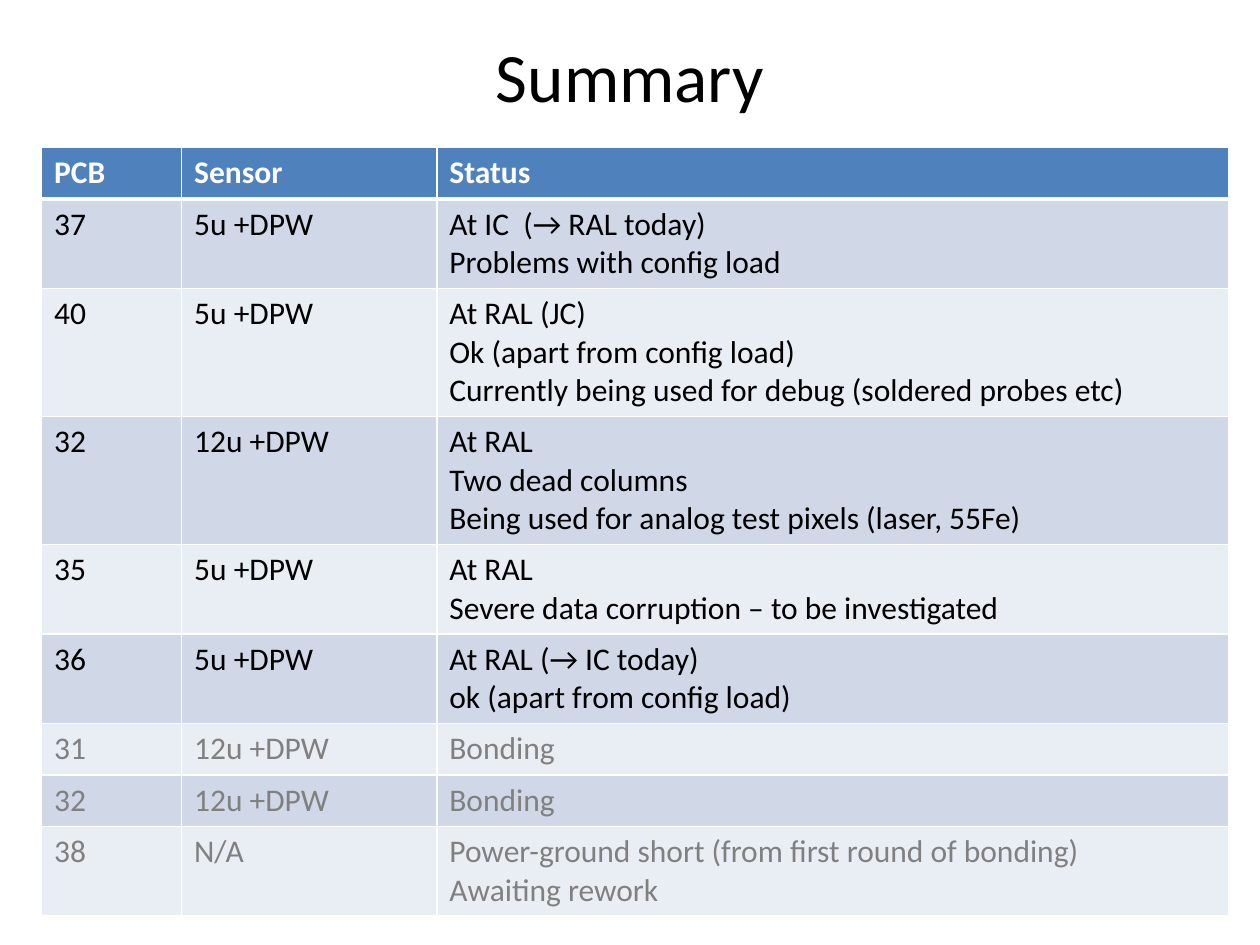
import dataclasses

import lxml.etree
import pptx
import pptx.dml.color
import pptx.enum.text
import pptx.oxml.ns
import pptx.util


@dataclasses.dataclass(frozen=True)
class Theme:
    font: str = "Calibri"
    title_size: float = 39.6
    body_size: float = 18
    ink: str = "000000"
    muted: str = "808080"
    paper: str = "FFFFFF"
    header: str = "4F81BD"
    bands: tuple = ("D0D8E8", "E9EDF4")
    rule: float = 1
    header_rule: float = 3


THEME = Theme()
SLIDE_WIDTH = pptx.util.Inches(10)
SLIDE_HEIGHT = pptx.util.Inches(7.5)
TITLE_BOX = (0.05, 0.033, 0.9, 0.093)
BOARDS_BOX = (0.033, 0.156, 0.942, 0.49)
COLUMN_SHARES = (0.118, 0.215, 0.667)
HEADINGS = ("PCB", "Sensor", "Status")
ACTIVE_BOARDS = (
    ("37", "5u +DPW", "At IC  (→ RAL today)\nProblems with config load"),
    ("40", "5u +DPW", "At RAL (JC)\nOk (apart from config load)\n"
     "Currently being used for debug (soldered probes etc)"),
    ("32", "12u +DPW", "At RAL\nTwo dead columns\n"
     "Being used for analog test pixels (laser, 55Fe)"),
    ("35", "5u +DPW", "At RAL\nSevere data corruption – to be investigated"),
    ("36", "5u +DPW", "At RAL (→ IC today)\nok (apart from config load)"),
)
PENDING_BOARDS = (
    ("31", "12u +DPW", "Bonding"),
    ("32", "12u +DPW", "Bonding"),
    ("38", "N/A", "Power-ground short (from first round of bonding)\nAwaiting rework"),
)


def rgb(colour):
    return pptx.dml.color.RGBColor.from_string(colour)


def place(box):
    left, top, width, height = box
    return (round(left * SLIDE_WIDTH), round(top * SLIDE_HEIGHT),
            round(width * SLIDE_WIDTH), round(height * SLIDE_HEIGHT))


def write(frame, text, size=THEME.body_size, colour=THEME.ink, bold=False,
          align=pptx.enum.text.PP_ALIGN.LEFT):
    frame.text = text
    for paragraph in frame.paragraphs:
        paragraph.alignment = align
        for run in paragraph.runs:
            run.font.name = THEME.font
            run.font.size = pptx.util.Pt(size)
            run.font.bold = bold
            run.font.color.rgb = rgb(colour)


def rule_cell(cell, top, bottom):
    properties = cell._tc.get_or_add_tcPr()
    qn = pptx.oxml.ns.qn
    widths = {"a:lnL": THEME.rule, "a:lnR": THEME.rule, "a:lnT": top, "a:lnB": bottom}
    for side, width in widths.items():
        line = lxml.etree.SubElement(properties, qn(side), w=str(pptx.util.Pt(width)))
        fill = lxml.etree.SubElement(line, qn("a:solidFill"))
        lxml.etree.SubElement(fill, qn("a:srgbClr"), val=THEME.paper)


def add_title(slide, box, text):
    title = slide.shapes.title
    title.left, title.top, title.width, title.height = place(box)
    frame = title.text_frame
    frame.auto_size = pptx.enum.text.MSO_AUTO_SIZE.NONE
    frame.vertical_anchor = pptx.enum.text.MSO_ANCHOR.MIDDLE
    write(frame, text, size=THEME.title_size, align=pptx.enum.text.PP_ALIGN.CENTER)


def add_boards(slide, box):
    rows = (HEADINGS, *ACTIVE_BOARDS, *PENDING_BOARDS)
    left, top, width, height = place(box)
    boards = slide.shapes.add_table(
        len(rows), len(HEADINGS), left, top, width, height).table
    for column, share in zip(boards.columns, COLUMN_SHARES):
        column.width = round(share * width)
    for row_index, row in enumerate(rows):
        is_header = row_index == 0
        if is_header:
            fill, colour = THEME.header, THEME.paper
        else:
            fill = THEME.bands[(row_index - 1) % len(THEME.bands)]
            colour = THEME.ink if row_index <= len(ACTIVE_BOARDS) else THEME.muted
        for column_index, text in enumerate(row):
            cell = boards.cell(row_index, column_index)
            rule_cell(cell,
                      top=THEME.header_rule if row_index == 1 else THEME.rule,
                      bottom=THEME.header_rule if is_header else THEME.rule)
            cell.fill.solid()
            cell.fill.fore_color.rgb = rgb(fill)
            write(cell.text_frame, text, colour=colour, bold=is_header)


def main():
    deck = pptx.Presentation()
    deck.slide_width, deck.slide_height = SLIDE_WIDTH, SLIDE_HEIGHT
    summary = deck.slides.add_slide(deck.slide_layouts.get_by_name("Title Only"))
    add_title(summary, TITLE_BOX, "Summary")
    add_boards(summary, BOARDS_BOX)
    deck.save("out.pptx")


if __name__ == "__main__":
    main()
